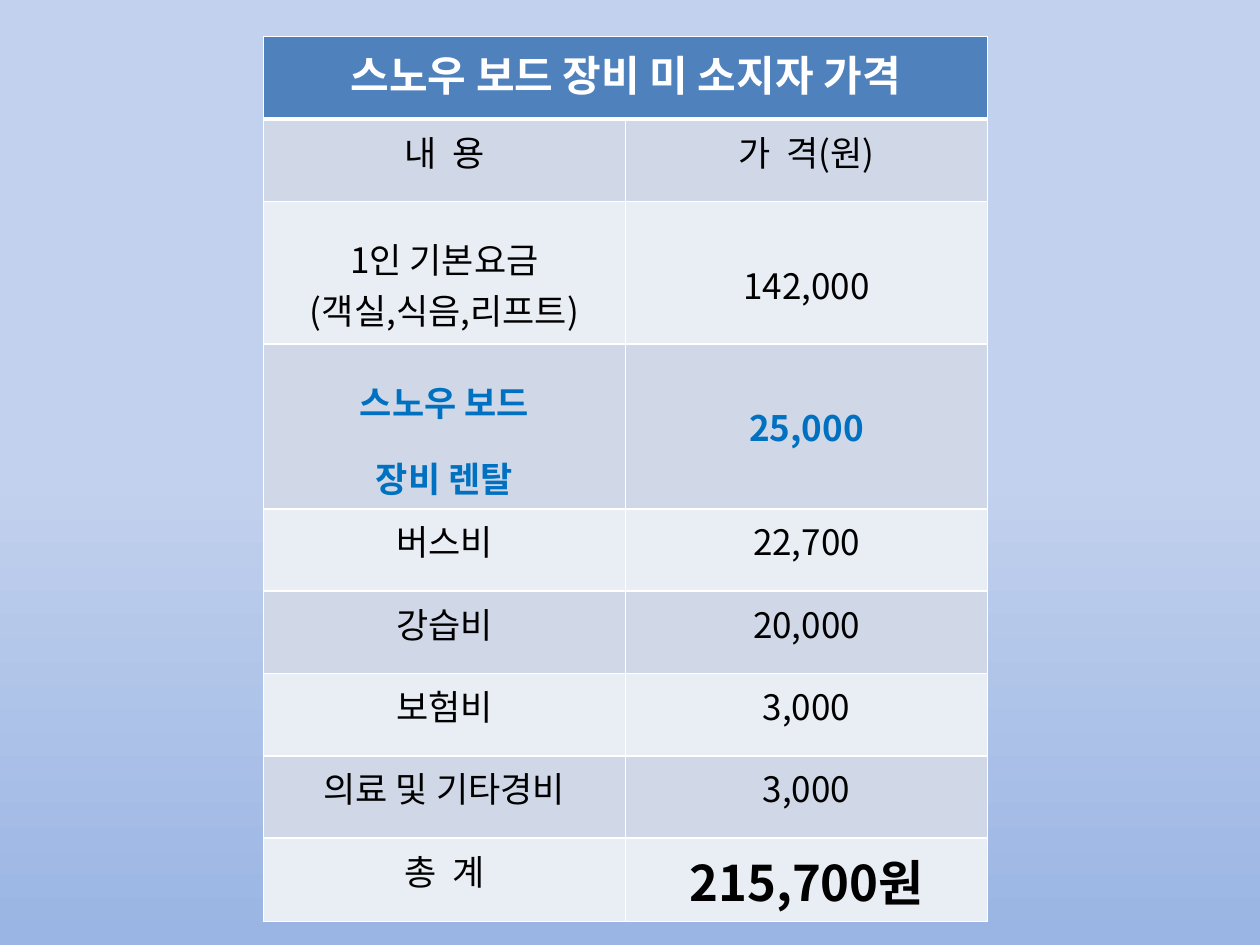
from dataclasses import dataclass

import pptx
import pptx.dml.color
import pptx.enum.text
import pptx.oxml
import pptx.oxml.ns
import pptx.util
from pptx.util import Cm


@dataclass(frozen=True)
class Theme:
    font: str = "Noto Sans CJK KR"
    background_top: str = "C2D1ED"
    background_bottom: str = "9AB5E4"
    header: str = "4F81BD"
    bands: tuple = ("D0D8E8", "E9EDF4")
    border: str = "FFFFFF"
    header_text: str = "FFFFFF"
    text: str = "000000"
    accent: str = "0070C0"
    header_size: int = 24
    body_size: int = 20
    total_size: int = 28


THEME = Theme()
HEADING = "스노우 보드 장비 미 소지자 가격"
PRICES = [
    ("내  용", "가  격(원)"),
    ("1인 기본요금\n(객실,식음,리프트)", "142,000"),
    ("스노우 보드\n장비 렌탈", "25,000"),
    ("버스비", "22,700"),
    ("강습비", "20,000"),
    ("보험비", "3,000"),
    ("의료 및 기타경비", "3,000"),
    ("총  계", "215,700원"),
]
BASE_ROW, RENTAL_ROW, TOTAL_ROW = 2, 3, len(PRICES)
ROW_HEIGHT, TALL_ROW_HEIGHT = Cm(1.66), Cm(2.87)


def rgb(value):
    return pptx.dml.color.RGBColor.from_string(value)


def paint_background(slide):
    fill = slide.background.fill
    fill.gradient()
    fill.gradient_angle = 270
    stops = ((0.5, THEME.background_top), (1, THEME.background_bottom))
    for stop, (position, color) in zip(fill.gradient_stops, stops):
        stop.position = position
        stop.color.rgb = rgb(color)


def set_borders(cell, bottom=1, top=1):
    properties = cell._tc.get_or_add_tcPr()
    for side, points in (("L", 1), ("R", 1), ("T", top), ("B", bottom)):
        properties.append(pptx.oxml.parse_xml(
            f'<a:ln{side} {pptx.oxml.ns.nsdecls("a")} w="{pptx.util.Pt(points)}">'
            f'<a:solidFill><a:srgbClr val="{THEME.border}"/></a:solidFill></a:ln{side}>'))


def fill_cell(cell, color):
    cell.fill.solid()
    cell.fill.fore_color.rgb = rgb(color)


def write_cell(cell, text, size=THEME.body_size, color=THEME.text, bold=False, spacings=()):
    cell.text_frame.text = text
    for paragraph in cell.text_frame.paragraphs:
        paragraph.alignment = pptx.enum.text.PP_ALIGN.CENTER
        for run in paragraph.runs:
            font = run.font
            font.name, font.size, font.bold = THEME.font, pptx.util.Pt(size), bold
            font.color.rgb = rgb(color)
            # East Asian text takes its own typeface element
            font._element.find(pptx.oxml.ns.qn("a:latin")).addnext(pptx.oxml.parse_xml(
                f'<a:ea {pptx.oxml.ns.nsdecls("a")} typeface="{THEME.font}"/>'))
    for paragraph, spacing in zip(cell.text_frame.paragraphs, spacings):
        paragraph.line_spacing = spacing


def cell_style(row, column):
    style = {}
    if row == BASE_ROW:
        style["spacings"] = (2.0,) if column else (1.5,)
    elif row == RENTAL_ROW:
        style.update(color=THEME.accent, bold=True,
                     spacings=(2.0,) if column else (1.5, 1.5))
    elif row == TOTAL_ROW and column:
        style.update(size=THEME.total_size, bold=True)
    return style


def add_price_table(slide):
    row_count = len(PRICES) + 1
    heights = [TALL_ROW_HEIGHT if row in (BASE_ROW, RENTAL_ROW) else ROW_HEIGHT
               for row in range(row_count)]
    table = slide.shapes.add_table(
        row_count, 2, Cm(5.31), Cm(0.74), Cm(14.6), sum(heights)).table
    for row, height in zip(table.rows, heights):
        row.height = height

    # Heading across both columns
    for cell in table.rows[0].cells:
        set_borders(cell, bottom=3)
        fill_cell(cell, THEME.header)
    table.cell(0, 0).merge(table.cell(0, 1))
    write_cell(table.cell(0, 0), HEADING, THEME.header_size, THEME.header_text, True)

    # Banded price rows
    for row, texts in enumerate(PRICES, start=1):
        for column, text in enumerate(texts):
            cell = table.cell(row, column)
            set_borders(cell, top=3 if row == 1 else 1)
            fill_cell(cell, THEME.bands[(row - 1) % 2])
            write_cell(cell, text, **cell_style(row, column))


def main():
    presentation = pptx.Presentation()
    presentation.slide_width, presentation.slide_height = Cm(25.4), Cm(19.05)
    slide = presentation.slides.add_slide(presentation.slide_layouts[6])
    paint_background(slide)
    add_price_table(slide)
    presentation.save("out.pptx")


if __name__ == "__main__":
    main()
